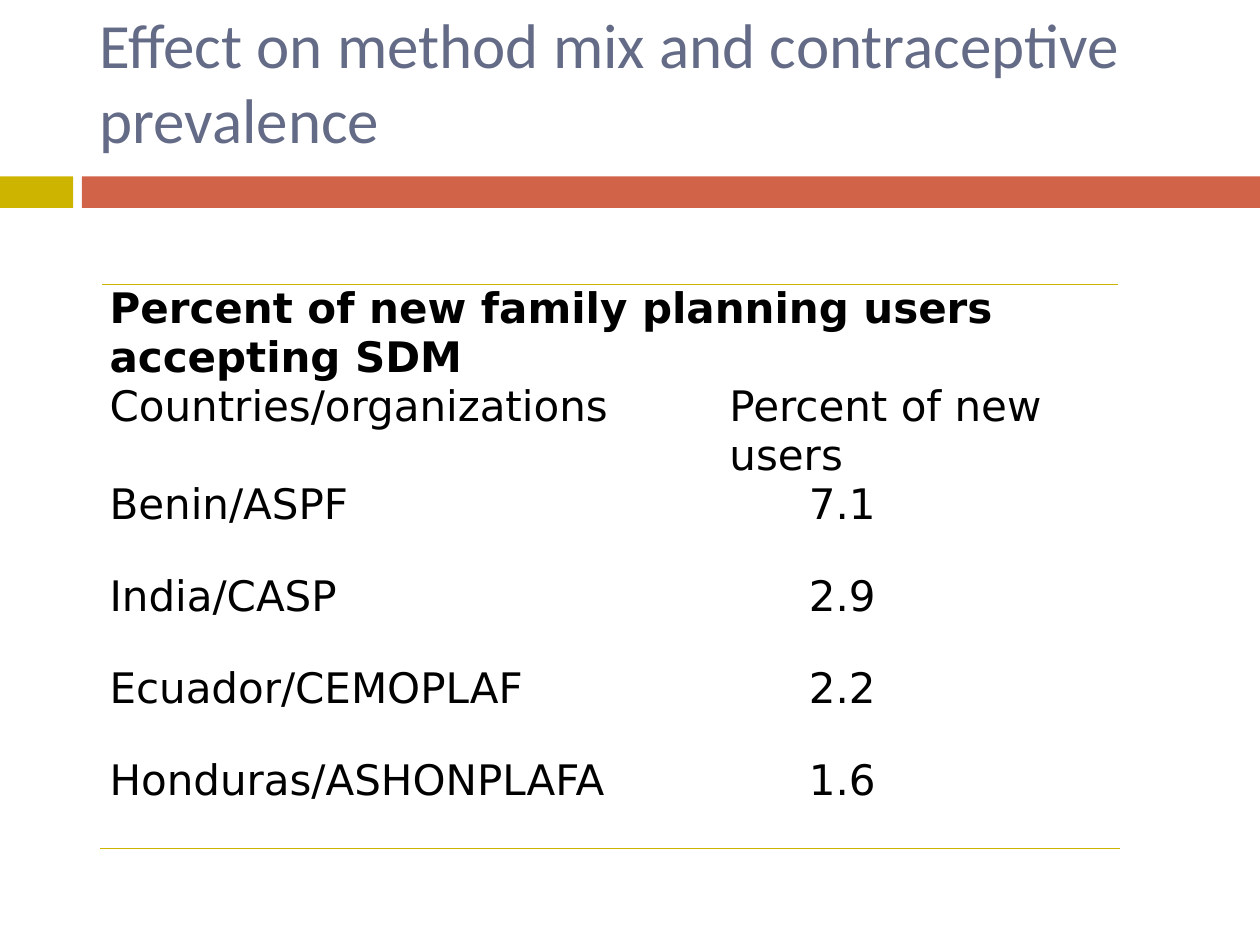
from lxml.etree import SubElement
from pptx import Presentation
from pptx.dml.color import RGBColor as RGB
from pptx.enum.shapes import MSO_SHAPE as SHAPE
from pptx.enum.text import MSO_ANCHOR as ANCHOR, PP_ALIGN as ALIGN
from pptx.oxml.ns import qn
from pptx.util import Inches, Pt

COLORS = {"gold": "CCB400", "red": "D16349", "title": "646B86", "text": "000000"}
ROWS = [
    ("Percent of new family planning users accepting SDM", ""),
    ("Countries/organizations", "Percent of new users"),
    ("Benin/ASPF", "7.1"),
    ("India/CASP", "2.9"),
    ("Ecuador/CEMOPLAF", "2.2"),
    ("Honduras/ASHONPLAFA", "1.6"),
]
HEADER_ROWS = 2
COL_WIDTHS = [4.92, 3.16]
ROW_HEIGHTS = [0.51, 0.53] + [0.73] * (len(ROWS) - HEADER_ROWS)


def format_runs(p, font, size, color, bold=False):
    for r in p.runs:
        r.font.name, r.font.size, r.font.bold = font, Pt(size), bold
        r.font.color.rgb = RGB.from_string(COLORS[color])


def add_border(cell, side):
    """Draw a 1 pt gold rule on one side of a cell: lnT or lnB."""
    tc_pr = cell._tc.get_or_add_tcPr()
    ln = tc_pr.makeelement(qn(f"a:{side}"), {"w": str(Pt(1))})
    fill = SubElement(ln, qn("a:solidFill"))
    SubElement(fill, qn("a:srgbClr"), val=COLORS["gold"])
    tc_pr.insert(0, ln)  # borders come before the cell fill


prs = Presentation()
prs.slide_width, prs.slide_height = Inches(10), Inches(7.5)
s = prs.slides.add_slide(prs.slide_layouts[5])

# Band under the title
for left, width, color in [(0, 0.58, "gold"), (0.65, 9.35, "red")]:
    sp = s.shapes.add_shape(SHAPE.RECTANGLE, Inches(left), Inches(1.4),
                            Inches(width), Inches(0.25))
    sp.shadow.inherit = False
    sp.fill.solid()
    sp.fill.fore_color.rgb = RGB.from_string(COLORS[color])
    sp.line.fill.background()

# Title
title = s.shapes.title
title.left, title.top = Inches(0.69), Inches(0.1)
title.width, title.height = Inches(8.92), Inches(1.08)
tf = title.text_frame
tf.text = "Effect on method mix and contraceptive prevalence"
tf.word_wrap = True
tf.vertical_anchor = ANCHOR.MIDDLE
tf.paragraphs[0].alignment = ALIGN.LEFT
format_runs(tf.paragraphs[0], "Calibri", 36, "title")

# Table
table = s.shapes.add_table(len(ROWS), len(COL_WIDTHS), Inches(0.8), Inches(2.26),
                           Inches(sum(COL_WIDTHS)), Inches(sum(ROW_HEIGHTS))).table
table.first_row = table.horz_banding = False
for column, width in zip(table.columns, COL_WIDTHS):
    column.width = Inches(width)
for row, height in zip(table.rows, ROW_HEIGHTS):
    row.height = Inches(height)
table.cell(0, 0).merge(table.cell(0, 1))

for i, texts in enumerate(ROWS):
    for j, text in enumerate(texts):
        cell = table.cell(i, j)
        is_value = i >= HEADER_ROWS and j == 1
        cell.fill.background()
        cell.margin_left = Inches(0.7 if is_value else 0.07)
        cell.margin_right = Inches(0.07)
        cell.margin_top = cell.margin_bottom = 0
        if i == 0:
            add_border(cell, "lnT")
        if i == len(ROWS) - 1:
            add_border(cell, "lnB")
        if text:
            cell.text_frame.text = text
            p = cell.text_frame.paragraphs[0]
            p.alignment = ALIGN.LEFT
            format_runs(p, "DejaVu Sans", 24, "text", bold=i == 0)

prs.save("out.pptx")
